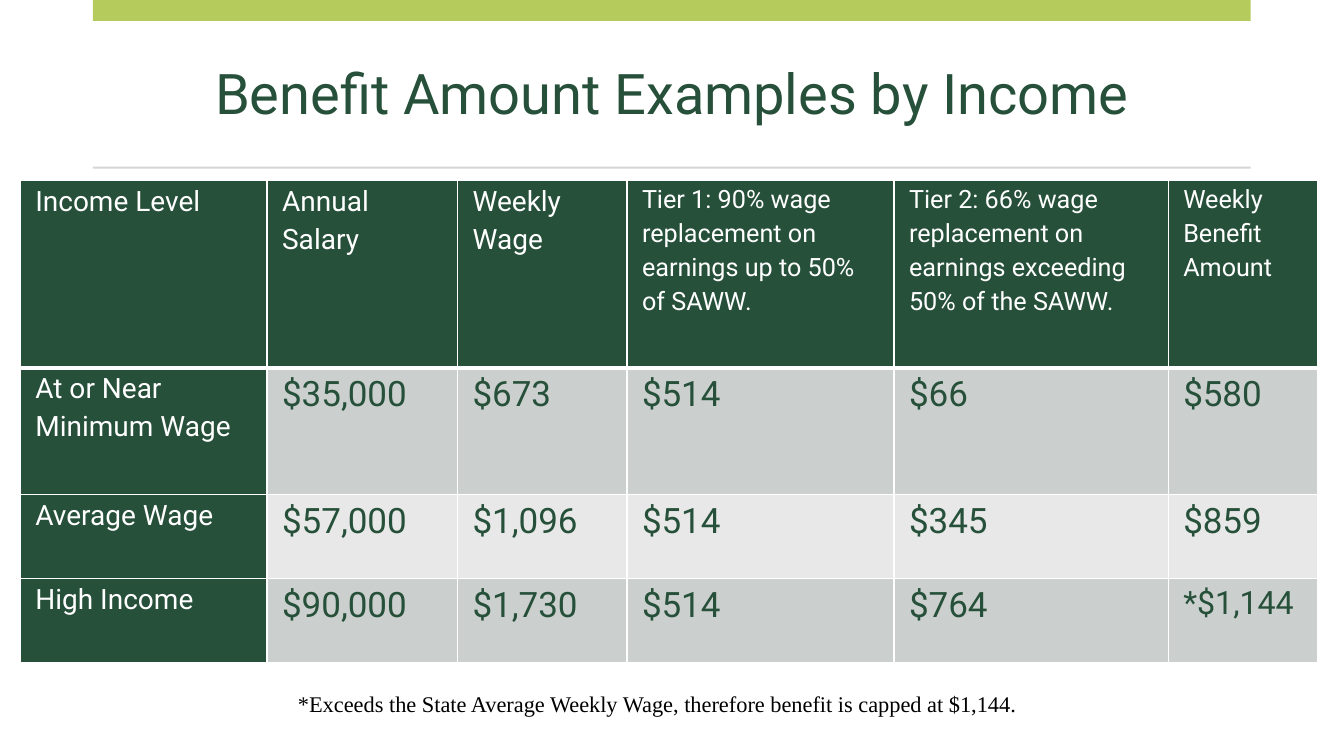
import pptx
import pptx.dml.color
import pptx.enum.shapes
import pptx.enum.text
import pptx.oxml
import pptx.oxml.ns
import pptx.util
from pptx.util import Cm

RGB = pptx.dml.color.RGBColor
GREEN = RGB(0x26, 0x50, 0x3A)
LIME = RGB(0xB5, 0xCB, 0x5C)
RULE = RGB(0xD5, 0xD5, 0xD5)
DARK = RGB(0xCB, 0xCF, 0xCD)
LIGHT = RGB(0xE7, 0xE8, 0xE7)
WHITE = RGB(0xFF, 0xFF, 0xFF)
BLACK = RGB(0, 0, 0)

COLS = [6.22, 4.8, 4.27, 6.73, 6.91, 3.76]
ROWS = [4.72, 3.2, 2.11, 2.11]
HEADS = [
    ("Income Level", 20),
    ("Annual Salary", 20),
    ("Weekly Wage", 20),
    ("Tier 1: 90% wage replacement on earnings up to 50% of SAWW.", 18),
    ("Tier 2: 66% wage replacement on earnings exceeding 50% of the SAWW.", 18),
    ("Weekly Benefit Amount", 18),
]
LEVELS = [
    ("At or Near Minimum Wage", "$35,000", "$673", "$514", "$66", "$580"),
    ("Average Wage", "$57,000", "$1,096", "$514", "$345", "$859"),
    ("High Income", "$90,000", "$1,730", "$514", "$764", "*$1,144"),
]


def add_run(para, text, size, color, face="Roboto"):
    run = para.add_run()
    run.text = text
    run.font.size = pptx.util.Pt(size)
    run.font.name = face
    run.font.color.rgb = color


def add_bar(slide, top, height, color):
    kind = pptx.enum.shapes.MSO_SHAPE.RECTANGLE
    bar = slide.shapes.add_shape(kind, Cm(2.34), Cm(top), Cm(29.18), Cm(height))
    bar.shadow.inherit = False
    bar.fill.solid()
    bar.fill.fore_color.rgb = color
    bar.line.fill.background()


def set_title(slide, text):
    title = slide.shapes.title
    title.left, title.top = Cm(2.34), Cm(0.94)
    title.width, title.height = Cm(29.18), Cm(3)
    title.text_frame.vertical_anchor = pptx.enum.text.MSO_ANCHOR.MIDDLE
    para = title.text_frame.paragraphs[0]
    para.alignment = pptx.enum.text.PP_ALIGN.CENTER
    para.line_spacing = 0.9
    add_run(para, text, 40, GREEN)


def add_edge(cell, side, points):
    ns = pptx.oxml.ns.nsdecls("a")
    edge = pptx.oxml.parse_xml(
        f'<a:ln{side} {ns} w="{pptx.util.Pt(points)}"><a:solidFill>'
        f'<a:srgbClr val="{WHITE}"/></a:solidFill></a:ln{side}>'
    )
    cell._tc.get_or_add_tcPr().append(edge)


def fill_cell(cell, text, size, color, back, top=1, bottom=1):
    for side, points in (("L", 1), ("R", 1), ("T", top), ("B", bottom)):
        add_edge(cell, side, points)
    cell.fill.solid()
    cell.fill.fore_color.rgb = back
    cell.margin_left = cell.margin_right = Cm(0.38)
    cell.margin_top = cell.margin_bottom = 0
    para = cell.text_frame.paragraphs[0]
    para.line_spacing = 1.15
    add_run(para, text, size, color)


def add_grid(slide):
    frame = slide.shapes.add_table(
        len(ROWS), len(COLS), Cm(0.51), Cm(4.55), Cm(sum(COLS)), Cm(sum(ROWS))
    )
    grid = frame.table
    for col, width in zip(grid.columns, COLS):
        col.width = Cm(width)
    for row, height in zip(grid.rows, ROWS):
        row.height = Cm(height)
    for c, (head, size) in enumerate(HEADS):
        fill_cell(grid.cell(0, c), head, size, WHITE, GREEN, bottom=3)
    for r, (level, *sums) in enumerate(LEVELS, 1):
        top = 3 if r == 1 else 1
        back = DARK if r % 2 else LIGHT
        fill_cell(grid.cell(r, 0), level, 20, WHITE, GREEN, top)
        for c, value in enumerate(sums, 1):
            size = 23 if value.startswith("*") else 25
            fill_cell(grid.cell(r, c), value, size, GREEN, back, top)


def add_note(slide, text):
    box = slide.shapes.add_textbox(Cm(7.26), Cm(17.27), Cm(20.24), Cm(0.94))
    box.text_frame.word_wrap = True
    add_run(box.text_frame.paragraphs[0], text, 16, BLACK, "Times New Roman")


def main():
    deck = pptx.Presentation()
    deck.slide_width, deck.slide_height = Cm(33.87), Cm(19.05)
    slide = deck.slides.add_slide(deck.slide_layouts[5])
    set_title(slide, "Benefit Amount Examples by Income")
    add_bar(slide, 0, 0.53, LIME)
    add_bar(slide, 4.2, 0.05, RULE)
    add_grid(slide)
    add_note(
        slide,
        "*Exceeds the State Average Weekly Wage, "
        "therefore benefit is capped at $1,144.",
    )
    deck.save("out.pptx")


if __name__ == "__main__":
    main()
